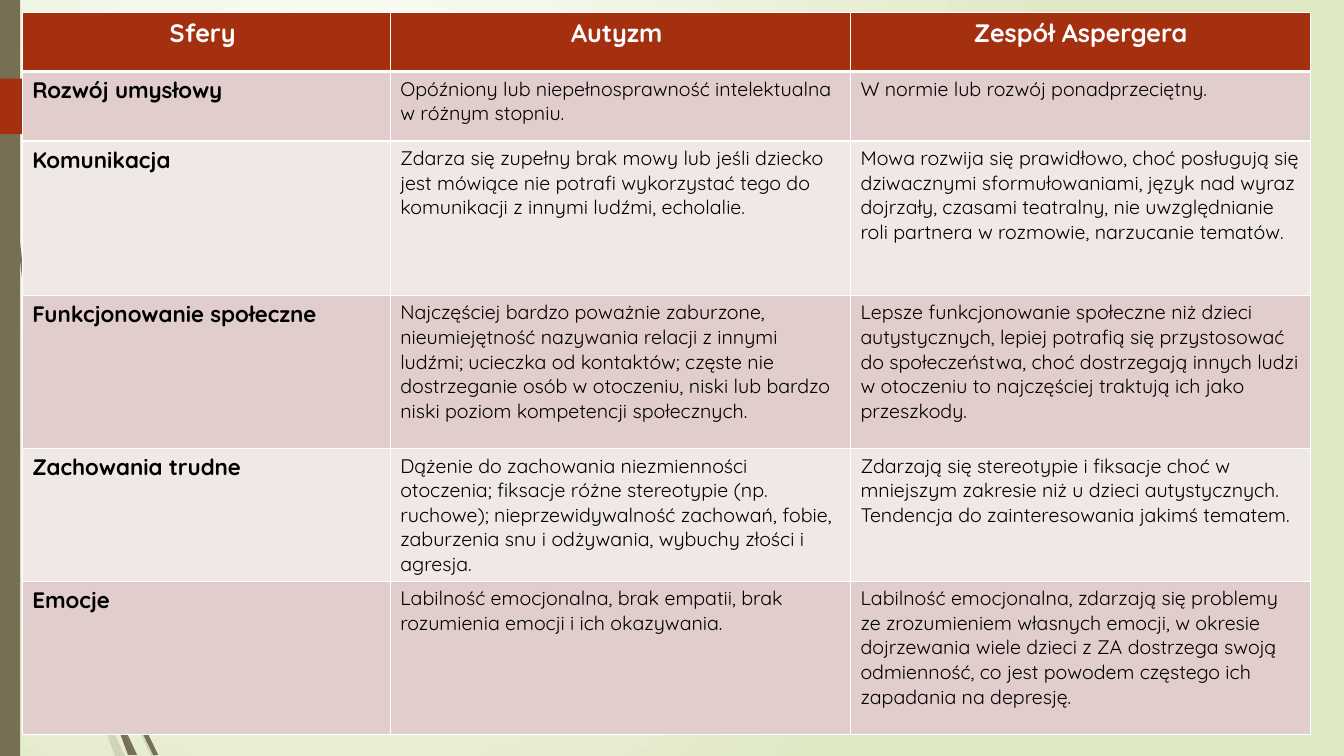
from lxml import etree
from pptx import Presentation
from pptx.dml.color import RGBColor
from pptx.enum.shapes import MSO_SHAPE
from pptx.enum.text import PP_ALIGN
from pptx.oxml.ns import qn
from pptx.util import Inches, Pt

RECTANGLE = MSO_SHAPE.RECTANGLE
PENTAGON = MSO_SHAPE.PENTAGON
CENTER = PP_ALIGN.CENTER
LEFT = PP_ALIGN.LEFT

FONT = "Quicksand"
WHITE = RGBColor(0xFF, 0xFF, 0xFF)
BLACK = RGBColor(0, 0, 0)
PALE_GREEN = RGBColor(0xDF, 0xE8, 0xC4)
RUST = RGBColor(0xA5, 0x30, 0x10)
OLIVE = RGBColor(0x76, 0x6F, 0x54)
DARK_BAND = RGBColor(0xE1, 0xCD, 0xCC)
LIGHT_BAND = RGBColor(0xF0, 0xE8, 0xE7)

ROWS = [
    ("Sfery ", "Autyzm ", "Zespół Aspergera"),
    ("Rozwój umysłowy",
     "Opóźniony lub niepełnosprawność intelektualna w różnym stopniu.",
     "W normie lub rozwój ponadprzeciętny."),
    ("Komunikacja",
     "Zdarza się zupełny brak mowy lub jeśli dziecko jest mówiące nie potrafi "
     "wykorzystać tego do komunikacji z innymi ludźmi, echolalie.",
     "Mowa rozwija się prawidłowo, choć posługują się dziwacznymi "
     "sformułowaniami, język nad wyraz dojrzały, czasami teatralny, nie "
     "uwzględnianie roli partnera w rozmowie, narzucanie tematów."),
    ("Funkcjonowanie społeczne",
     "Najczęściej bardzo poważnie zaburzone, nieumiejętność nazywania relacji "
     "z innymi ludźmi; ucieczka od kontaktów; częste nie dostrzeganie osób w "
     "otoczeniu, niski lub bardzo niski poziom kompetencji społecznych.",
     "Lepsze funkcjonowanie społeczne niż dzieci autystycznych, lepiej "
     "potrafią się przystosować do społeczeństwa, choć dostrzegają innych "
     "ludzi w otoczeniu to najczęściej traktują ich jako przeszkody."),
    ("Zachowania trudne",
     "Dążenie do zachowania niezmienności otoczenia; fiksacje różne "
     "stereotypie (np. ruchowe); nieprzewidywalność zachowań, fobie, "
     "zaburzenia snu i odżywania, wybuchy złości i agresja.",
     "Zdarzają się stereotypie i fiksacje choć w mniejszym zakresie niż u "
     "dzieci autystycznych. Tendencja do zainteresowania jakimś tematem."),
    ("Emocje",
     "Labilność emocjonalna, brak empatii, brak rozumienia emocji i ich "
     "okazywania.",
     "Labilność emocjonalna, zdarzają się problemy ze zrozumieniem własnych "
     "emocji, w okresie dojrzewania wiele dzieci z ZA dostrzega swoją "
     "odmienność, co jest powodem częstego ich zapadania na depresję."),
]
TABLE_LEFT, TABLE_TOP, TABLE_WIDTH = 0.22, 0.12, 12.78
TOPIC_WIDTH = 3.65
DETAIL_WIDTH = (TABLE_WIDTH - TOPIC_WIDTH) / 2
COLUMN_WIDTHS = [TOPIC_WIDTH, DETAIL_WIDTH, DETAIL_WIDTH]
ROW_HEIGHTS = [0.59, 0.69, 1.53, 1.52, 1.28, 1.52]

SLIDE_WIDTH, SLIDE_HEIGHT = 13.33, 7.5
PALE_STEMS = [
    [(0.88, 5.96), (1.03, 6.36), (1.27, 6.92), (1.55, 7.5), (1.5, 7.5),
     (1.23, 6.94), (0.88, 6.1)],
    [(1.05, 7.11), (1.24, 7.5), (1.19, 7.5)],
    [(1.01, 7.14), (1.19, 7.5), (1.14, 7.5)],
    [(0.93, 6.83), (1.05, 7.11), (1.19, 7.5), (0.99, 7.07)],
]
DARK_STEMS = [
    [(1.1, 6.41), (1.13, 6.49), (1.36, 7.06), (1.57, 7.49), (1.52, 7.49),
     (1.32, 7.08), (1.11, 6.56)],
    [(1.22, 7.19), (1.36, 7.49), (1.33, 7.49)],
    [(1.17, 7.22), (1.31, 7.49), (1.27, 7.49)],
    [(1.1, 6.91), (1.22, 7.19), (1.33, 7.49), (1.3, 7.49), (1.17, 7.22)],
    [(0.03, 0), (0.04, 0), (0.05, 0.48), (0.08, 1.09), (0.19, 2.32),
     (0.26, 2.94), (0.36, 3.55), (0.55, 4.53), (0.57, 4.81), (0.44, 4.16),
     (0.33, 3.55), (0.24, 2.94), (0.17, 2.33), (0.07, 1.1)],
]


def paint_background(slide):
    fill = slide.background.fill
    fill.gradient()
    for stop, color in zip(fill.gradient_stops, (WHITE, PALE_GREEN)):
        stop.color.rgb = color
    gradient = next(slide.element.iter(qn("a:gradFill")))
    gradient.remove(gradient.find(qn("a:lin")))
    circle = etree.SubElement(gradient, qn("a:path"), {"path": "circle"})
    etree.SubElement(circle, qn("a:fillToRect"),
                     {"l": "50000", "t": "50000", "r": "100000", "b": "100000"})


def paint(shape, color, opacity=100):
    shape.shadow.inherit = False
    shape.line.fill.background()
    shape.fill.solid()
    shape.fill.fore_color.rgb = color
    if opacity < 100:
        rgb = next(shape.element.spPr.iter(qn("a:srgbClr")))
        etree.SubElement(rgb, qn("a:alpha"), {"val": str(opacity * 1000)})


def add_stems(slide, stems, opacity):
    for stem in stems:
        points = [(Inches(x), Inches(y)) for x, y in stem]
        builder = slide.shapes.build_freeform(*points[0])
        builder.add_line_segments(points[1:], close=True)
        paint(builder.convert_to_shape(), OLIVE, opacity)


def add_bar(slide, preset, left, top, width, height, color):
    bar = slide.shapes.add_shape(preset, Inches(left), Inches(top),
                                 Inches(width), Inches(height))
    paint(bar, color)


def add_border(cell, side, points):
    properties = cell._tc.get_or_add_tcPr()
    line = etree.Element(qn(f"a:ln{side}"), {"w": str(Pt(points))})
    fill = etree.SubElement(line, qn("a:solidFill"))
    etree.SubElement(fill, qn("a:srgbClr"), {"val": str(WHITE)})
    # borders come before the fill
    properties.insert(len(properties) - 1, line)


def fill_cell(cell, text, row, column):
    header = row == 0
    cell.fill.solid()
    cell.fill.fore_color.rgb = RUST if header else DARK_BAND if row % 2 else LIGHT_BAND
    for side in "LRTB":
        thick = (side == "B" and header) or (side == "T" and row == 1)
        add_border(cell, side, 3 if thick else 1)
    paragraph = cell.text_frame.paragraphs[0]
    paragraph.alignment = CENTER if header else LEFT
    run = paragraph.add_run()
    run.text = text
    run.font.name = FONT
    run.font.size = Pt(18 if header else 16 if column == 0 else 14)
    run.font.bold = header or column == 0
    run.font.color.rgb = WHITE if header else BLACK


def add_comparison_table(slide):
    table = slide.shapes.add_table(
        len(ROWS), len(COLUMN_WIDTHS), Inches(TABLE_LEFT), Inches(TABLE_TOP),
        Inches(TABLE_WIDTH), Inches(sum(ROW_HEIGHTS))).table
    for column, width in zip(table.columns, COLUMN_WIDTHS):
        column.width = Inches(width)
    for row, height in zip(table.rows, ROW_HEIGHTS):
        row.height = Inches(height)
    for row, texts in enumerate(ROWS):
        for column, text in enumerate(texts):
            fill_cell(table.cell(row, column), text, row, column)


def main():
    presentation = Presentation()
    presentation.slide_width = Inches(SLIDE_WIDTH)
    presentation.slide_height = Inches(SLIDE_HEIGHT)
    slide = presentation.slides.add_slide(presentation.slide_layouts[6])
    paint_background(slide)
    add_stems(slide, PALE_STEMS, 20)
    add_stems(slide, DARK_STEMS, 100)
    add_bar(slide, RECTANGLE, 0, 0, 0.2, SLIDE_HEIGHT, OLIVE)
    add_bar(slide, PENTAGON, 0, 0.78, 1.74, 0.55, RUST)
    add_comparison_table(slide)
    presentation.save("out.pptx")


if __name__ == "__main__":
    main()
